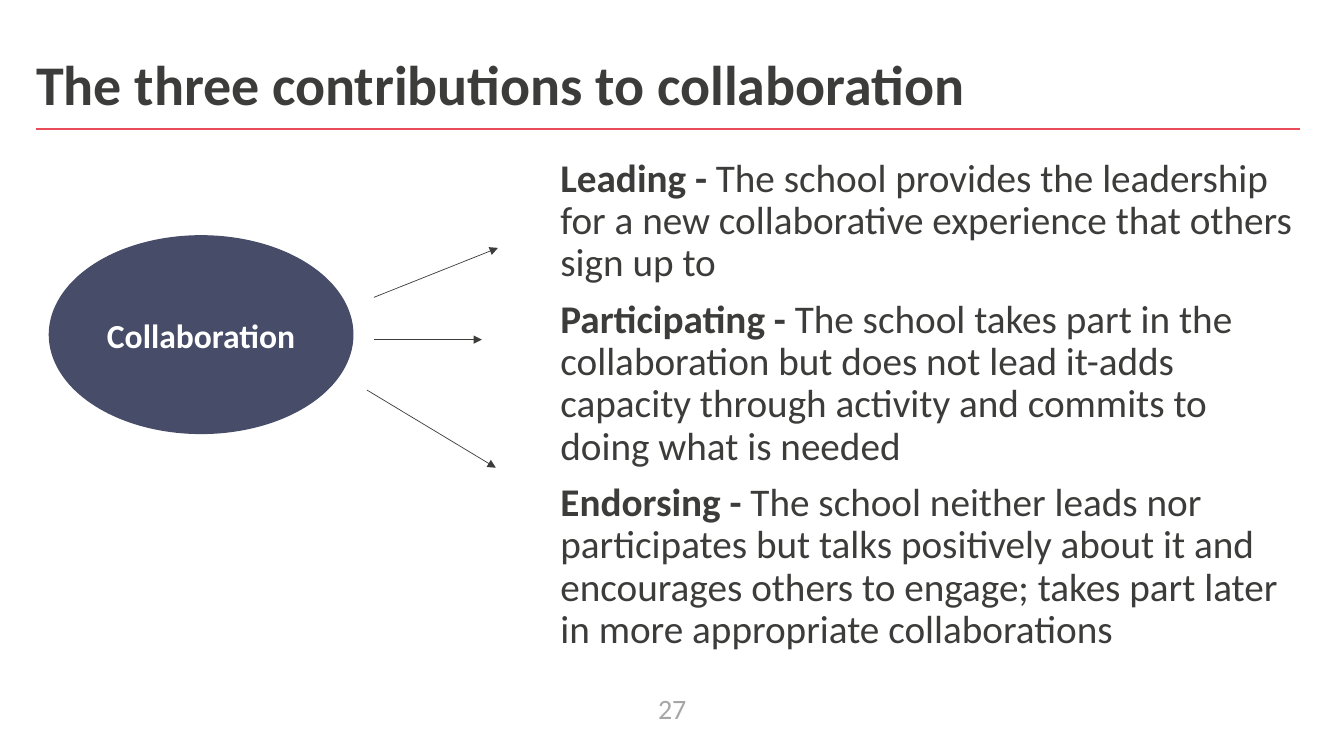
from dataclasses import dataclass

from lxml.etree import SubElement
from pptx import Presentation
from pptx.dml.color import RGBColor
from pptx.enum.shapes import MSO_CONNECTOR, MSO_SHAPE
from pptx.enum.text import MSO_ANCHOR, MSO_AUTO_SIZE, PP_ALIGN
from pptx.oxml.ns import qn
from pptx.slide import Slide
from pptx.text.text import Font, TextFrame
from pptx.util import Pt

COLOURS = {
    "text": "3C3C3B",
    "rule": "E94B58",
    "ellipse": "474C68",
    "white": "FFFFFF",
    "number": "A6A6A6",
}


@dataclass(frozen=True)
class Box:
    left: float
    top: float
    width: float
    height: float


@dataclass(frozen=True)
class Line:
    start: tuple[float, float]
    end: tuple[float, float]
    colour: str = "text"
    weight: float = 0.5
    arrow: bool = True


@dataclass(frozen=True)
class Contribution:
    name: str
    description: str


TITLE_BOX = Box(18.7, 37.4, 903.6, 62.6)
BODY_BOX = Box(393.1, 109.4, 537.8, 352.8)
ELLIPSE_BOX = Box(35.3, 168.5, 216.7, 141.1)
NUMBER_BOX = Box(372.2, 491.8, 216, 28.8)

LINES = [
    Line((25.9, 92.2), (928.8, 92.2), "rule", 1.5, False),
    Line((267.1, 212.4), (355.7, 177.1)),
    Line((267.1, 242.6), (344.2, 242.6)),
    Line((262.1, 278.6), (354.2, 334.1)),
]

CONTRIBUTIONS = [
    Contribution(
        "Leading",
        "The school provides the leadership for a new collaborative "
        "experience that others sign up to",
    ),
    Contribution(
        "Participating",
        "The school takes part in the collaboration but does not lead it-adds "
        "capacity through activity and commits to doing what is needed",
    ),
    Contribution(
        "Endorsing",
        "The school neither leads nor participates but talks positively about "
        "it and encourages others to engage; takes part later in more "
        "appropriate collaborations",
    ),
]


def colour(name: str) -> RGBColor:
    return RGBColor.from_string(COLOURS[name])


def place(shape, box: Box) -> None:
    shape.left, shape.top = Pt(box.left), Pt(box.top)
    shape.width, shape.height = Pt(box.width), Pt(box.height)


def set_font(font: Font, size: float, colour_name: str) -> None:
    font.name = "Calibri"
    font.size = Pt(size)
    font.color.rgb = colour(colour_name)


def set_frame(frame: TextFrame, anchor: MSO_ANCHOR) -> None:
    frame.word_wrap = True
    frame.auto_size = MSO_AUTO_SIZE.NONE
    frame.vertical_anchor = anchor


def add_line(slide: Slide, line: Line) -> None:
    points = [Pt(value) for value in (*line.start, *line.end)]
    connector = slide.shapes.add_connector(MSO_CONNECTOR.STRAIGHT, *points)
    connector.line.color.rgb = colour(line.colour)
    connector.line.width = Pt(line.weight)
    if line.arrow:
        SubElement(connector.line._get_or_add_ln(), qn("a:tailEnd"), type="triangle")
    SubElement(connector._element.spPr, qn("a:effectLst"))


def fill_title(slide: Slide) -> None:
    title = slide.shapes.title
    place(title, TITLE_BOX)
    set_frame(title.text_frame, MSO_ANCHOR.TOP)
    paragraph = title.text_frame.paragraphs[0]
    paragraph.text = "The three contributions to collaboration"
    paragraph.alignment = PP_ALIGN.LEFT
    paragraph.line_spacing = 0.9
    paragraph.space_before = Pt(0)
    set_font(paragraph.font, 40, "text")
    paragraph.font.bold = True


def fill_body(slide: Slide) -> None:
    body = slide.placeholders[1]
    place(body, BODY_BOX)
    frame = body.text_frame
    set_frame(frame, MSO_ANCHOR.TOP)
    for index, contribution in enumerate(CONTRIBUTIONS):
        paragraph = frame.add_paragraph() if index else frame.paragraphs[0]
        paragraph.line_spacing = 0.9
        paragraph.space_before = Pt(10 if index else 0)
        properties = paragraph._p.get_or_add_pPr()
        properties.set("marL", "0")
        properties.set("indent", "0")
        SubElement(properties, qn("a:buNone"))
        set_font(paragraph.font, 28, "text")
        name = paragraph.add_run()
        name.text = f"{contribution.name} - "
        name.font.bold = True
        paragraph.add_run().text = contribution.description


def add_ellipse(slide: Slide) -> None:
    box = ELLIPSE_BOX
    ellipse = slide.shapes.add_shape(
        MSO_SHAPE.OVAL, Pt(box.left), Pt(box.top), Pt(box.width), Pt(box.height)
    )
    ellipse.shadow.inherit = False
    ellipse.fill.solid()
    ellipse.fill.fore_color.rgb = colour("ellipse")
    ellipse.line.color.rgb = colour("ellipse")
    ellipse.line.width = Pt(1)
    set_frame(ellipse.text_frame, MSO_ANCHOR.MIDDLE)
    paragraph = ellipse.text_frame.paragraphs[0]
    paragraph.text = "Collaboration"
    paragraph.alignment = PP_ALIGN.CENTER
    set_font(paragraph.font, 24, "white")
    paragraph.font.bold = True


def add_number(slide: Slide) -> None:
    box = NUMBER_BOX
    number = slide.shapes.add_textbox(
        Pt(box.left), Pt(box.top), Pt(box.width), Pt(box.height)
    )
    set_frame(number.text_frame, MSO_ANCHOR.MIDDLE)
    paragraph = number.text_frame.paragraphs[0]
    paragraph.text = "27"
    paragraph.alignment = PP_ALIGN.CENTER
    set_font(paragraph.font, 20, "number")


def main() -> None:
    presentation = Presentation()
    presentation.slide_width, presentation.slide_height = Pt(960), Pt(540)
    slide = presentation.slides.add_slide(presentation.slide_layouts[1])
    fill_title(slide)
    fill_body(slide)
    add_ellipse(slide)
    add_number(slide)
    for line in LINES:
        add_line(slide, line)
    presentation.save("out.pptx")


if __name__ == "__main__":
    main()
